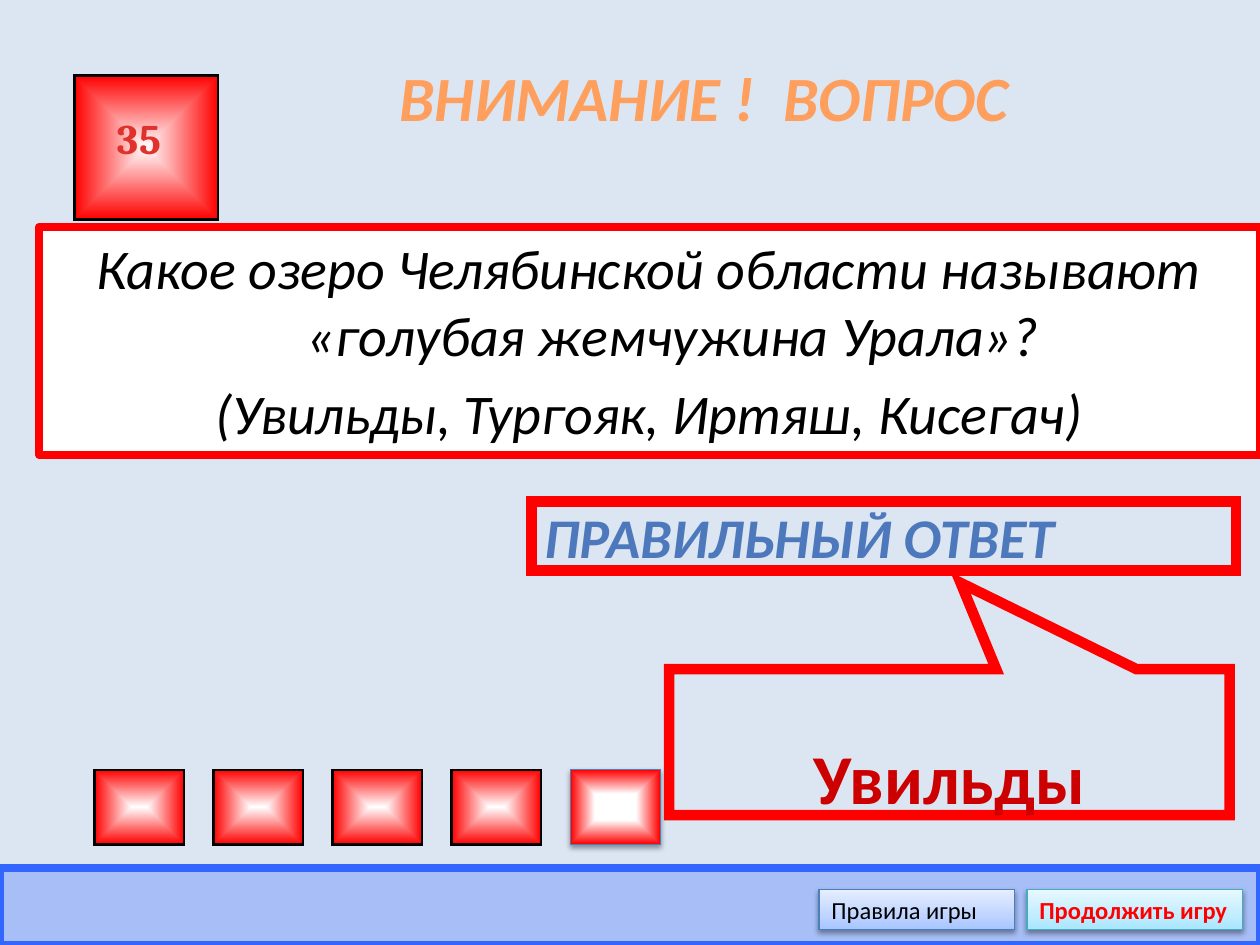
from lxml import etree
from pptx import Presentation
from pptx import util as u
from pptx.dml.color import RGBColor
from pptx.enum import shapes, text
from pptx.oxml.ns import qn

COLUMNS, ROWS = 100, 75
CELL = u.Inches(0.1)
RED, BLACK, PALE_BLUE, BAR_BLUE = "FF0000", "000000", "DCE6F2", "3366FF"
STEEL, TEAL = "4B7EBC", "46AAC5"
RED_GLOW = [(0, "FFFFFF"), (100, RED)]
RED_FRAME = [(0, "FFFFFF"), (35, "FFFFFF"), (100, RED), (100, "FFFFFF")]
BLUE_FADE = [(0, "A4C4FF"), (35, "BFD4FF"), (100, "E6EEFF")]
CYAN_FADE = [(0, "A7E6FF"), (35, "C1EDFF"), (100, "E7F8FF")]
ORANGE_TEXT = [(0, "FFA367"), (25, "FF9F5D"), (50, "F38E3A"), (75, "FF9F5D"), (100, "FFA367")]
BLUE_TEXT = [(0, "7494C9"), (49, "4D79BC"), (50, "346AAA"), (92, "325F94"), (100, "315D91")]
RED_TEXT = [(25, "E0322D"), (100, "A2201C")]
BUTTON = shapes.MSO_SHAPE.ACTION_BUTTON_CUSTOM
RECTANGLE = shapes.MSO_SHAPE.RECTANGLE
LEFT, CENTER = text.PP_ALIGN.LEFT, text.PP_ALIGN.CENTER
TOP, MIDDLE = text.MSO_ANCHOR.TOP, text.MSO_ANCHOR.MIDDLE


def color(value):
    return RGBColor.from_string(value)


def child(parent, tag, **attributes):
    return etree.SubElement(parent, qn(tag), {k: str(v) for k, v in attributes.items()})


def paint(fill, properties, value, angle=90, shade=None):
    """Fill with one colour, or with a list of (percent, colour) stops."""
    if isinstance(value, str):
        fill.solid()
        fill.fore_color.rgb = color(value)
        return
    fill.gradient()
    gradient = properties.find(qn("a:gradFill"))
    for element in list(gradient):
        gradient.remove(element)
    stops = child(gradient, "a:gsLst")
    for percent, stop_color in value:
        child(child(stops, "a:gs", pos=percent * 1000), "a:srgbClr", val=stop_color)
    if shade:
        center = child(gradient, "a:path", path=shade)
        child(center, "a:fillToRect", l=50000, t=50000, r=50000, b=50000)
    else:
        child(gradient, "a:lin", ang=angle * 60000, scaled=0)


def place(shape, left, top, width, height):
    shape.left, shape.top = int(left * CELL), int(top * CELL)
    shape.width, shape.height = int(width * CELL), int(height * CELL)


def outline(shape, line_color, width):
    shape.line.color.rgb = color(line_color)
    shape.line.width = u.Pt(width)


def add_box(slide, kind, cells, fill, line_color, width, angle=90, shade=None, shadow=False):
    shape = slide.shapes.add_shape(kind, 0, 0, 0, 0)
    place(shape, *cells)
    properties = shape._element.spPr
    paint(shape.fill, properties, fill, angle, shade)
    outline(shape, line_color, width)
    child(properties.find(qn("a:ln")), "a:miter", lim=800000)
    shape.shadow.inherit = False
    if shadow:
        effect = child(properties.find(qn("a:effectLst")), "a:outerShdw",
                       blurRad=40000, dist=20000, dir=5400000, rotWithShape=0)
        child(child(effect, "a:srgbClr", val=BLACK), "a:alpha", val=38000)
    return shape


def write(shape, lines, size, fill, font="Calibri", bold=False, italic=False,
          align=LEFT, anchor=MIDDLE):
    frame = shape.text_frame
    frame.word_wrap = True
    frame.auto_size = text.MSO_AUTO_SIZE.NONE
    frame.vertical_anchor = anchor
    if align == LEFT:
        frame.margin_right = 0
    for index, line in enumerate(lines):
        paragraph = frame.add_paragraph() if index else frame.paragraphs[0]
        paragraph.alignment = align
        run = paragraph.add_run()
        run.text = line
        run.font.name, run.font.size = font, u.Pt(size)
        run.font.bold, run.font.italic = bold, italic
        paint(run.font.fill, run._r.get_or_add_rPr(), fill)
    return frame


def add_question(slide):
    title, body = slide.placeholders[0], slide.placeholders[1]
    place(title, 24, 3, 63.8, 9.3)
    write(title, ["ВНИМАНИЕ !  ВОПРОС"], 36, ORANGE_TEXT, bold=True, italic=True, align=CENTER)

    place(body, 3.1, 18, 96.9, 18.1)
    paint(body.fill, body._element.spPr, "FFFFFF")
    outline(body, RED, 4.5)
    frame = write(body, ["Какое озеро Челябинской области называют «голубая жемчужина Урала»?",
                         "(Увильды, Тургояк, Иртяш, Кисегач)"],
                  32, BLACK, italic=True, align=CENTER, anchor=TOP)
    for paragraph in frame.paragraphs:
        child(paragraph._p.get_or_add_pPr(), "a:buNone")


def add_score(slide):
    add_box(slide, BUTTON, (5.9, 6, 11.4, 11.4), RED_GLOW, BLACK, 1.5, shade="rect")
    score = slide.shapes.add_textbox(0, 0, 0, 0)
    place(score, 8.3, 8.4, 6.3, 6.3)
    frame = write(score, ["35"], 24, RED_TEXT, font="Cambria", bold=True, anchor=TOP)
    frame.paragraphs[0].runs[0]._r.get_or_add_rPr().set("spc", "50")


def add_button_row(slide, count=5, first=7.5, last=45.3):
    step = (last - first) / (count - 1)
    for index in range(count):
        cells = (first + index * step, 61.1, 7.1, 5.9)
        if index < count - 1:
            add_box(slide, BUTTON, cells, RED_GLOW, BLACK, 1.5, shade="rect")
        else:
            add_box(slide, BUTTON, cells, RED_FRAME, STEEL, 0.75, shade="rect", shadow=True)


def add_answer(slide):
    heading = add_box(slide, RECTANGLE, (42.2, 39.8, 55.9, 5.5), PALE_BLUE, RED, 6)
    write(heading, ["ПРАВИЛЬНЫЙ ОТВЕТ"], 32, BLUE_TEXT, bold=True, italic=True)

    callout = add_box(slide, shapes.MSO_SHAPE.RECTANGULAR_CALLOUT,
                      (53.1, 53.1, 44.5, 11.6), PALE_BLUE, RED, 6)
    callout.rotation = 180
    callout.adjustments[0], callout.adjustments[1] = -0.02, 1.09
    frame = write(callout, ["Увильды"], 40, "CC0000", bold=True, align=CENTER, anchor=TOP)
    frame.paragraphs[0].line_spacing = 1.7
    frame._txBody.bodyPr.set("rot", str(180 * 60000))


def add_navigation(slide):
    bar = add_box(slide, RECTANGLE, (0, 68.9, COLUMNS, ROWS - 68.9), BAR_BLUE, BAR_BLUE, 4.5)
    bar_color = bar._element.spPr.find(qn("a:solidFill")).find(qn("a:srgbClr"))
    child(bar_color, "a:alpha", val=31000)
    for left, width, label, fade, edge, label_color, bold in (
            (65, 15.5, "Правила игры", BLUE_FADE, STEEL, BLACK, False),
            (81.5, 17.1, "Продолжить игру", CYAN_FADE, TEAL, RED, True)):
        button = add_box(slide, RECTANGLE, (left, 70.6, width, 3.2), fade, edge, 0.75,
                         angle=270, shadow=True)
        write(button, [label], 14, label_color, bold=bold)


def main():
    presentation = Presentation()
    presentation.slide_width, presentation.slide_height = COLUMNS * CELL, ROWS * CELL
    slide = presentation.slides.add_slide(presentation.slide_layouts[1])
    slide.background.fill.solid()
    slide.background.fill.fore_color.rgb = color(PALE_BLUE)
    add_question(slide)
    add_score(slide)
    add_button_row(slide)
    add_answer(slide)
    add_navigation(slide)
    presentation.save("out.pptx")


if __name__ == "__main__":
    main()
